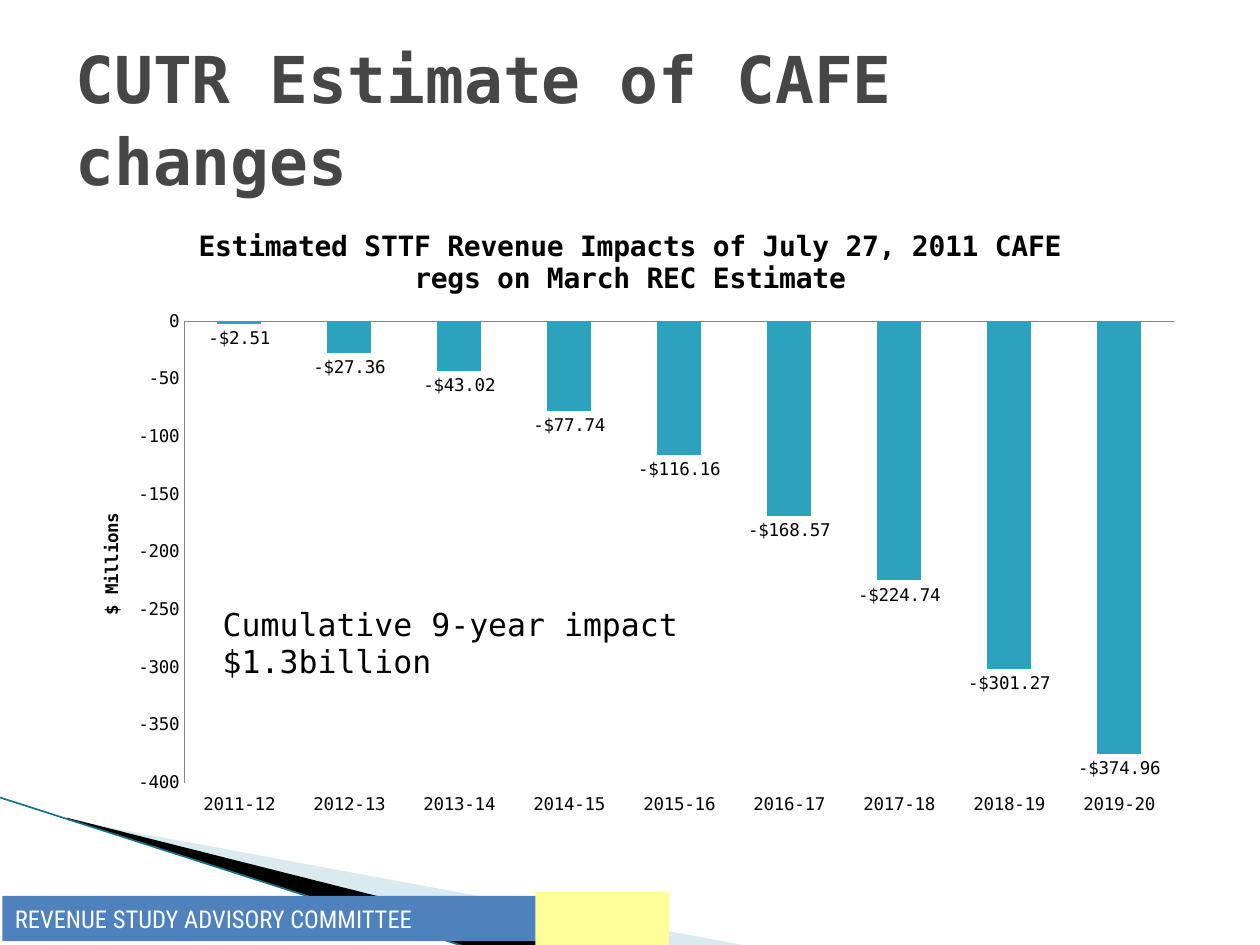
from lxml import etree
from pptx import Presentation
from pptx.chart.data import CategoryChartData
from pptx.dml.color import RGBColor
from pptx.enum.chart import XL_CHART_TYPE, XL_LABEL_POSITION, XL_TICK_LABEL_POSITION, XL_TICK_MARK
from pptx.enum.shapes import MSO_CONNECTOR, MSO_SHAPE
from pptx.enum.text import MSO_ANCHOR, PP_ALIGN
from pptx.oxml import parse_xml
from pptx.oxml.ns import nsdecls, qn
from pptx.util import Pt

MONO = "DejaVu Sans Mono"
CONDENSED = "Roboto Condensed"
BLACK = RGBColor(0, 0, 0)
WHITE = RGBColor(255, 255, 255)
GREY = RGBColor(0x46, 0x46, 0x46)
AXIS_GREY = RGBColor(0x86, 0x86, 0x86)
PALE_BLUE = RGBColor(0xA0, 0xCB, 0xDC)
DARK_TEAL = RGBColor(0x1B, 0x71, 0x84)
TEAL = RGBColor(0x2D, 0xA2, 0xBF)
BLUE = RGBColor(0x4F, 0x81, 0xBD)
YELLOW = RGBColor(0xFF, 0xFF, 0x99)

IMPACTS = {
    "2011-12": -2.51, "2012-13": -27.36, "2013-14": -43.02,
    "2014-15": -77.74, "2015-16": -116.16, "2016-17": -168.57,
    "2017-18": -224.74, "2018-19": -301.27, "2019-20": -374.96,
}


def set_font(font, color=BLACK, **values):
    for name, value in values.items():
        setattr(font, name, value)
    font.color.rgb = color


def write(shape, text, anchor=MSO_ANCHOR.TOP, spacing=None, **values):
    tf = shape.text_frame
    tf.word_wrap = True
    tf.vertical_anchor = anchor
    p = tf.paragraphs[0]
    p.alignment = PP_ALIGN.LEFT
    if spacing:
        p.line_spacing = spacing
    r = p.add_run()
    r.text = text
    set_font(r.font, **values)


def add_text(s, box, text, **values):
    write(s.shapes.add_textbox(*map(Pt, box)), text, **values)


def paint(sp, color):
    sp.shadow.inherit = False
    sp.fill.solid()
    sp.fill.fore_color.rgb = color
    sp.line.fill.background()


def add_polygon(s, points, color, alpha=None):
    start, *rest = [(Pt(x), Pt(y)) for x, y in points]
    builder = s.shapes.build_freeform(*start)
    builder.add_line_segments(rest)
    sp = builder.convert_to_shape()
    paint(sp, color)
    if alpha:
        clr = sp._element.spPr.find(qn("a:solidFill"))[0]
        etree.SubElement(clr, qn("a:alpha")).set("val", str(alpha * 1000))


def add_line(s, x1, y1, x2, y2, color, width):
    line = s.shapes.add_connector(MSO_CONNECTOR.STRAIGHT, Pt(x1), Pt(y1), Pt(x2), Pt(y2))
    line.line.color.rgb = color
    line.line.width = Pt(width)
    etree.SubElement(line._element.spPr, qn("a:effectLst"))


def add_rect(parent, box, color):
    sp = parent.shapes.add_shape(MSO_SHAPE.RECTANGLE, *map(Pt, box))
    paint(sp, color)
    return sp


def set_layout(element, inner=False, **places):
    """Place a chart part by fractions of the chart's size."""
    old = element.find(qn("c:layout"))
    if old is not None:
        element.remove(old)
    target = '<c:layoutTarget val="inner"/>' if inner else ""
    modes = "".join(f'<c:{k}Mode val="edge"/>' for k in ("x", "y"))
    values = "".join(f'<c:{k} val="{v}"/>' for k, v in places.items())
    layout = parse_xml(
        f'<c:layout {nsdecls("c")}><c:manualLayout>{target}{modes}{values}'
        "</c:manualLayout></c:layout>")
    tx = element.find(qn("c:tx"))
    element.insert(0 if tx is None else 1, layout)


def set_title(owner, text, size):
    owner.has_title = True
    title = owner.chart_title if hasattr(owner, "chart_title") else owner.axis_title
    r = title.text_frame.paragraphs[0].add_run()
    r.text = text
    set_font(r.font, name=MONO, size=Pt(size), bold=True)
    return title


def add_impact_chart(s, box):
    data = CategoryChartData(number_format="General")
    data.categories = list(IMPACTS)
    data.add_series("Series 1", list(IMPACTS.values()))
    chart = s.shapes.add_chart(
        XL_CHART_TYPE.COLUMN_CLUSTERED, *map(Pt, box), data).chart
    chart.has_legend = False
    set_font(chart.font, name=MONO, size=Pt(10))
    set_title(chart, "Estimated STTF Revenue Impacts of July 27, 2011 CAFE "
                     "regs on March REC Estimate", 16)

    # Axes
    value, category = chart.value_axis, chart.category_axis
    for axis in (value, category):
        axis.has_major_gridlines = False
        axis.major_tick_mark = axis.minor_tick_mark = XL_TICK_MARK.NONE
        axis.format.line.color.rgb = AXIS_GREY
        axis.format.line.width = Pt(0.75)
    category.tick_label_position = XL_TICK_LABEL_POSITION.LOW
    value.minimum_scale, value.maximum_scale, value.major_unit = -400, 0, 50
    axis_title = set_title(value, "$ Millions", 10)
    set_layout(axis_title._element, x=0.03, y=0.49)
    set_layout(chart._chartSpace.chart.plotArea, inner=True,
               x=0.107, y=0.188, w=0.873, h=0.74)

    # Columns and their labels
    plot = chart.plots[0]
    plot.vary_by_categories = False
    plot.gap_width = 150
    series = plot.series[0]
    series.invert_if_negative = False
    series.format.fill.solid()
    series.format.fill.fore_color.rgb = TEAL
    labels = series.data_labels
    formats = {"show_value": True, "number_format": '"$"#,##0.00',
               "number_format_is_linked": False,
               "position": XL_LABEL_POSITION.OUTSIDE_END}
    for name, setting in formats.items():
        setattr(labels, name, setting)
    set_font(labels.font, name=MONO, size=Pt(10))


def add_footer(s):
    group = s.shapes.add_group_shape()
    banner = add_rect(group, (1.44, 512, 309.6, 25.9), BLUE)
    write(banner, "REVENUE STUDY ADVISORY COMMITTEE", anchor=MSO_ANCHOR.MIDDLE,
          name=CONDENSED, size=Pt(14), color=WHITE)
    add_rect(group, (306, 509.8, 76.3, 30.2), YELLOW)


def main():
    prs = Presentation()
    prs.slide_width, prs.slide_height = Pt(720), Pt(540)
    s = prs.slides.add_slide(prs.slide_layouts[6])

    # Corner decoration
    add_polygon(s, [(39.6, 468.7), (428.4, 540.7), (328.3, 540.7), (39.6, 468)],
                PALE_BLUE, alpha=40)
    add_polygon(s, [(38.2, 467.3), (329, 540.7), (267.8, 541.4), (38.9, 468)], BLACK)
    add_line(s, -0.7, 455.5, 267.1, 541.4, DARK_TEAL, 0.95)

    # Title and chart
    add_text(s, (36, 21.6, 648, 90), "CUTR Estimate of CAFE changes",
             anchor=MSO_ANCHOR.MIDDLE, spacing=1.05,
             name=MONO, size=Pt(36.9), bold=True, color=GREY)
    add_impact_chart(s, (36, 116.6, 648, 356.4))

    # Footer and remark
    add_footer(s)
    add_text(s, (120.2, 342, 390.2, 28.8), "Cumulative 9-year impact $1.3billion",
             name=MONO, size=Pt(18))

    prs.save("out.pptx")


if __name__ == "__main__":
    main()
